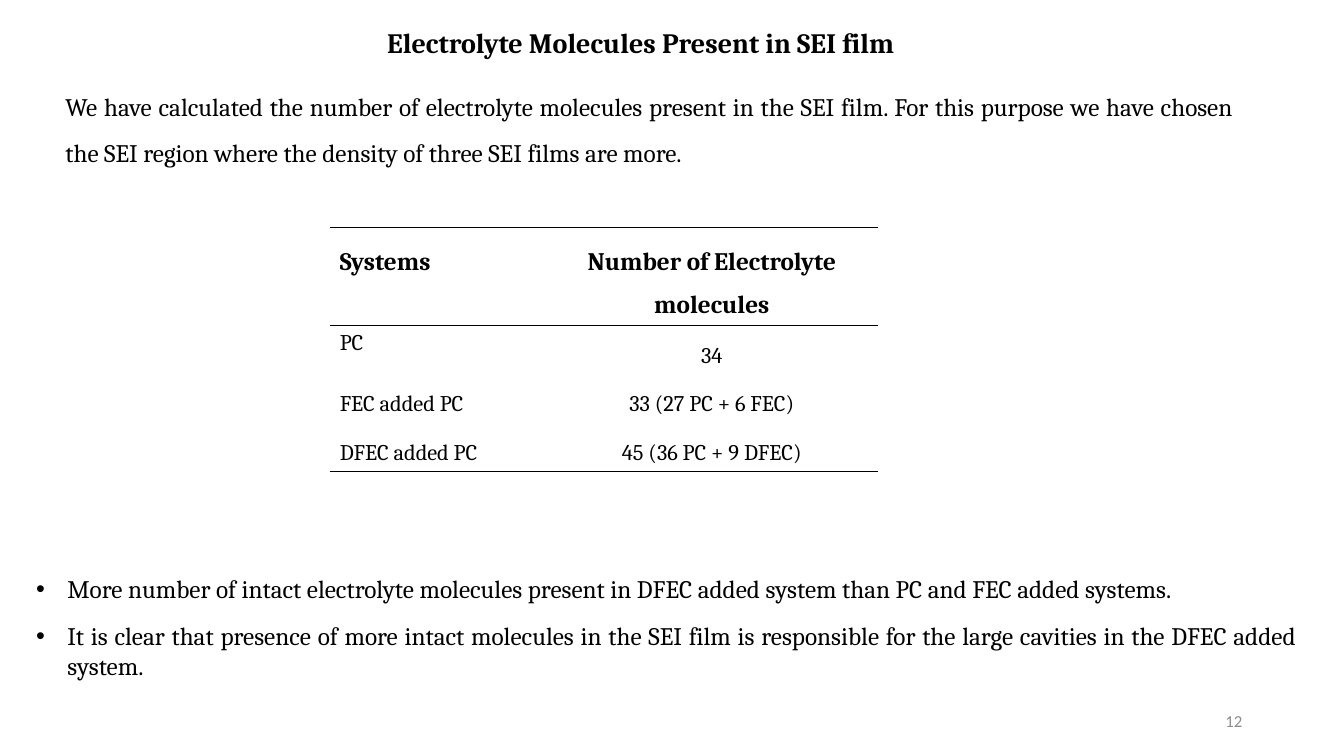
from lxml import etree
from pptx import Presentation
from pptx import util as u
from pptx.dml.color import RGBColor
from pptx.enum import text
from pptx.oxml import ns

BLACK, GREY = "000000", "8C8C8C"
LEFT, CENTER = text.PP_ALIGN.LEFT, text.PP_ALIGN.CENTER
JUSTIFY, RIGHT = text.PP_ALIGN.JUSTIFY, text.PP_ALIGN.RIGHT
NO_STYLE = "{2D5ABB26-0587-4C30-8999-92F81FD0307C}"

INTRO = ("We have calculated the number of electrolyte molecules present in the SEI film. "
         "For this purpose we have chosen the SEI region where the density of three SEI films are more.")
FINDINGS = [
    "More number of intact electrolyte molecules present in DFEC added system than PC and FEC added systems.",
    "It is clear that presence of more intact molecules in the SEI film is responsible "
    "for the large cavities in the DFEC added system.",
]
MOLECULES = [
    ("Systems", "Number of Electrolyte molecules"),
    ("PC", "34"),
    ("FEC added PC", "33 (27 PC + 6 FEC)"),
    ("DFEC added PC", "45 (36 PC + 9 DFEC)"),
]


def rgb(hex_color):
    return RGBColor.from_string(hex_color)


def set_all(obj, values):
    for name, value in values.items():
        setattr(obj, name, value)


def write(p, content, size=18, bold=False, color=BLACK, font="Cambria", **layout):
    """Fill one paragraph; layout holds paragraph attributes."""
    set_all(p, layout)
    r = p.add_run()
    r.text = content
    set_all(r.font, {"name": font, "size": u.Pt(size), "bold": bold})
    r.font.color.rgb = rgb(color)


def place(sp, left, top, width, height, anchor=text.MSO_ANCHOR.TOP):
    """Position a text shape and return its wrapping text frame."""
    box = dict(left=left, top=top, width=width, height=height)
    set_all(sp, {name: u.Inches(value) for name, value in box.items()})
    tf = sp.text_frame
    set_all(tf, {"word_wrap": True, "auto_size": text.MSO_AUTO_SIZE.NONE,
                 "vertical_anchor": anchor})
    return tf


def add_text(s, *box, **kwargs):
    return place(s.shapes.add_textbox(0, 0, 0, 0), *box, **kwargs)


def add_bullets(tf, items):
    for i, item in enumerate(items):
        p = tf.paragraphs[0] if i == 0 else tf.add_paragraph()
        pPr = p._p.get_or_add_pPr()
        pPr.set("marL", str(u.Inches(0.31)))
        pPr.set("indent", str(-u.Inches(0.31)))
        etree.SubElement(pPr, ns.qn("a:buFont"), typeface="Arial")
        etree.SubElement(pPr, ns.qn("a:buChar"), char="•")
        write(p, item, alignment=JUSTIFY, space_before=u.Pt(6 if i else 0),
              space_after=u.Pt(6))


def add_rule(cell, edge):
    """Draw a thin black border on one edge: lnT or lnB."""
    ln = etree.SubElement(cell._tc.get_or_add_tcPr(), ns.qn("a:" + edge), w=str(u.Pt(1)))
    fill = etree.SubElement(ln, ns.qn("a:solidFill"))
    etree.SubElement(fill, ns.qn("a:srgbClr"), val=BLACK)


def add_molecule_table(s, rows):
    frame = s.shapes.add_table(len(rows), 2, u.Inches(3.27), u.Inches(2.26),
                               u.Inches(5.44), u.Inches(2.1))
    table = frame.table
    set_all(table, {"first_row": False, "horz_banding": False})
    table._tbl.tblPr.find(ns.qn("a:tableStyleId")).text = NO_STYLE
    for column, width in zip(table.columns, (2.14, 3.3)):
        column.width = u.Inches(width)
    for i, row in enumerate(rows):
        header = i == 0
        table.rows[i].height = u.Inches(0.84 if header else 0.42)
        for j, content in enumerate(row):
            cell = table.cell(i, j)
            if header:
                add_rule(cell, "lnT")
            if header or i == len(rows) - 1:
                add_rule(cell, "lnB")
            cell.fill.background()
            write(cell.text_frame.paragraphs[0], content, size=18 if header else 16,
                  bold=header, alignment=CENTER if j else LEFT,
                  line_spacing=1.0 if content == "PC" else 1.5)


def main():
    prs = Presentation()
    set_all(prs, {"slide_width": u.Inches(13.33), "slide_height": u.Inches(7.5)})
    s = prs.slides.add_slide(prs.slide_layouts[5])

    title = place(s.shapes.title, 3.74, 0.2, 5.56, 0.44)
    write(title.paragraphs[0], "Electrolyte Molecules Present in SEI film",
          size=20, bold=True, alignment=LEFT)
    add_molecule_table(s, MOLECULES)
    intro = add_text(s, 0.55, 0.71, 11.78, 0.95)
    write(intro.paragraphs[0], INTRO, alignment=JUSTIFY, line_spacing=1.5)
    add_bullets(add_text(s, 0.26, 5.64, 12.7, 1.18), FINDINGS)
    number = add_text(s, 9.42, 6.95, 3, 0.4, anchor=text.MSO_ANCHOR.MIDDLE)
    write(number.paragraphs[0], "12", size=12, color=GREY, font="Calibri", alignment=RIGHT)

    prs.save("out.pptx")


if __name__ == "__main__":
    main()
